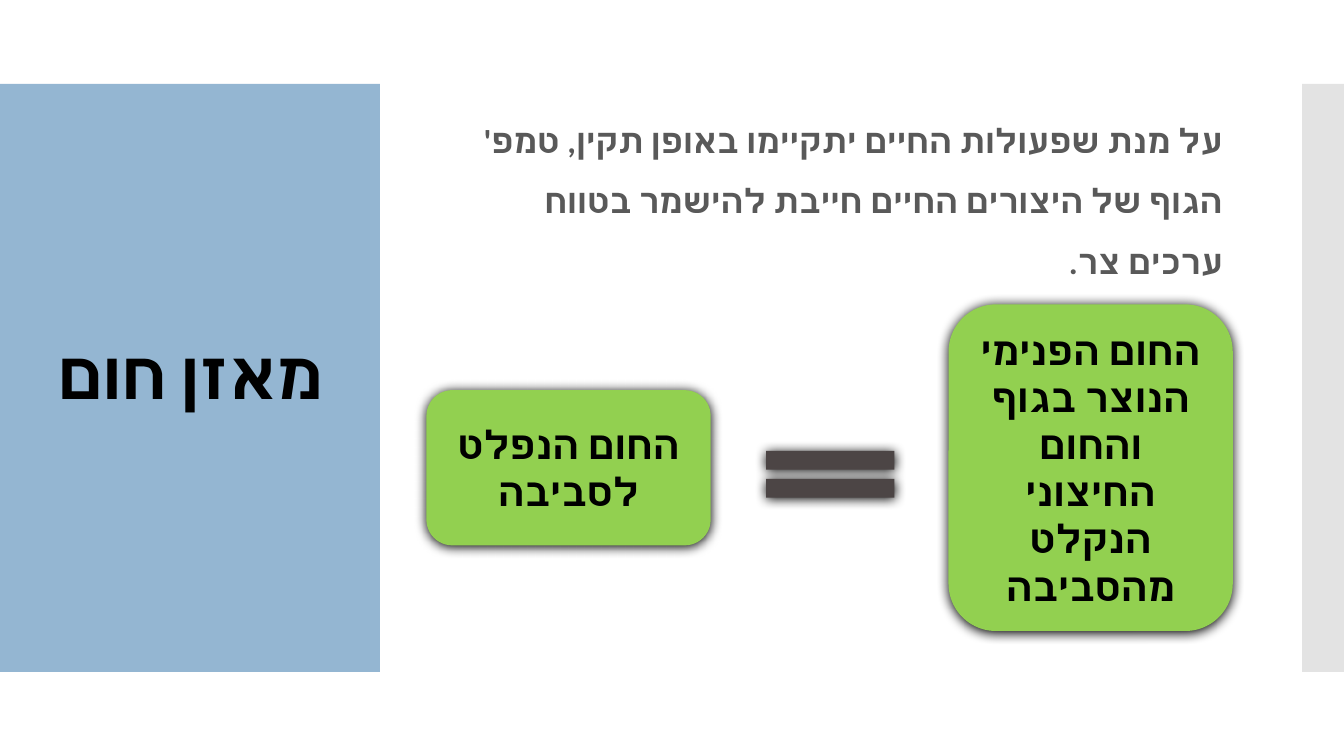
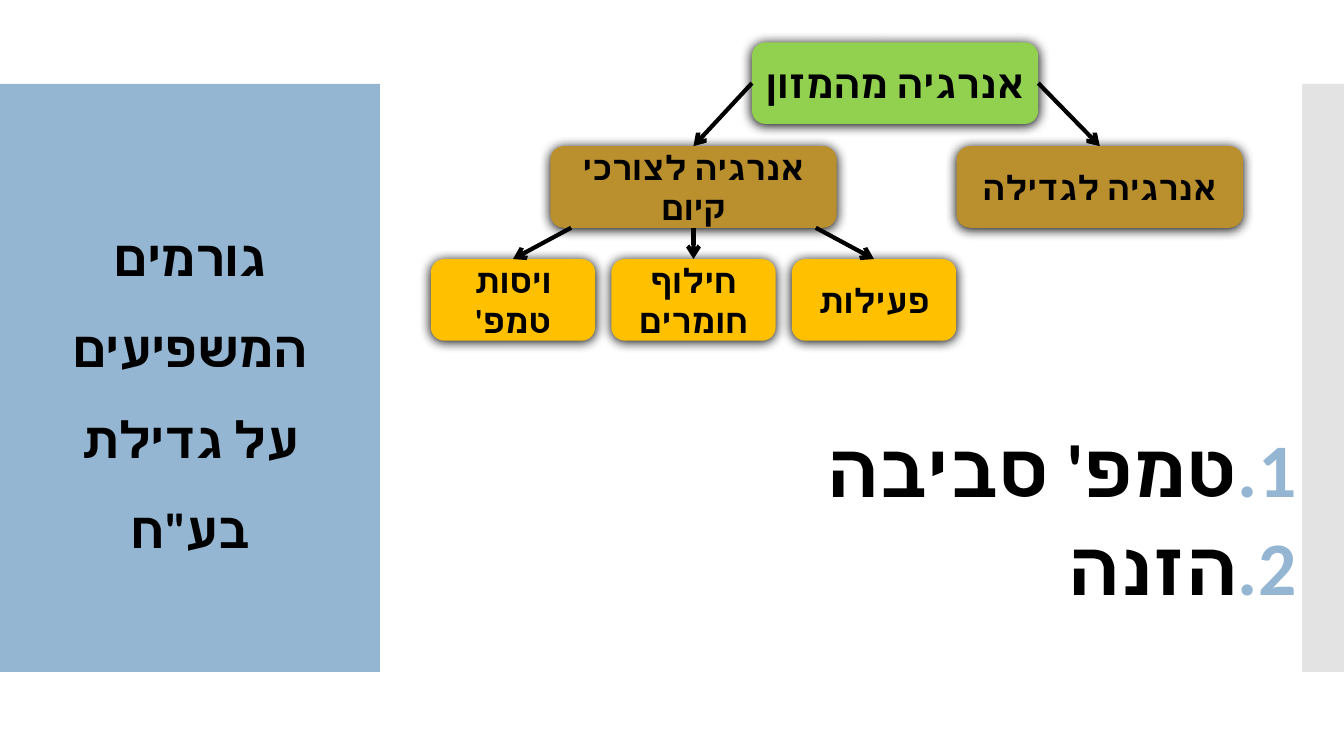
from dataclasses import dataclass

from lxml import etree
from pptx import Presentation, util as u
from pptx.dml.color import RGBColor
from pptx.enum import shapes, text
from pptx.oxml import ns


@dataclass(frozen=True)
class Theme:
    font: str = "Calibri"
    ink: str = "000000"
    soft_ink: str = "595959"
    accent: str = "94B6D2"
    edge: str = "C8C8C8"
    sign: str = "4C4545"
    source: str = "92D050"
    use: str = "BA8F2D"
    need: str = "FFC000"
    title: int = 48
    long_title: int = 36
    body: int = 24
    label: int = 28
    item: int = 54


THEME = Theme()
SHAPE = shapes.MSO_SHAPE
ALIGN = text.PP_ALIGN
ANCHOR = text.MSO_ANCHOR


def add_xml(parent, tag, **attributes):
    child = etree.SubElement(parent, ns.qn(tag))
    for name, value in attributes.items():
        child.set(name, str(value))
    return child


def write(shape, *lines, size=THEME.body, color=THEME.ink, align=ALIGN.CENTER,
          anchor=ANCHOR.MIDDLE, leading=1.0, before=0, tracking=0, inset=0.1,
          numbered=False):
    """Fill a shape with bold right-to-left paragraphs, one per line."""
    frame = shape.text_frame
    frame.word_wrap = True
    frame.vertical_anchor = anchor
    frame.margin_left = frame.margin_right = u.Inches(inset)
    for index, line in enumerate(lines):
        paragraph = frame.add_paragraph() if index else frame.paragraphs[0]
        paragraph.alignment = align
        paragraph.line_spacing = leading
        paragraph.space_before = u.Pt(before)
        properties = paragraph._p.get_or_add_pPr()
        properties.set("rtl", "1")
        if numbered:
            indent = u.Inches(0.5)
            properties.set("marL", str(indent))
            properties.set("indent", str(-indent))
            add_xml(add_xml(properties, "a:buClr"), "a:srgbClr", val=THEME.accent)
            add_xml(properties, "a:buAutoNum", type="arabicPeriod")
        run = paragraph.add_run()
        run.text = line
        font = run.font
        font.name, font.size, font.bold = THEME.font, u.Pt(size), True
        font.color.rgb = RGBColor.from_string(color)
        add_xml(font._element, "a:cs", typeface=THEME.font)
        if tracking:
            font._element.set("spc", str(round(tracking * 100)))


class Deck:
    """Holds the current slide; every length is a percentage of the slide's size."""

    BAND_TOP, BAND_HEIGHT, BAND_WIDTH = 11.11, 77.78, 28.27
    EDGE_LEFT = 96.88

    def __init__(self):
        self.presentation = Presentation()
        self.presentation.slide_width = u.Inches(13.33)
        self.presentation.slide_height = u.Inches(7.5)
        self.slide = None

    def x(self, share):
        return round(self.presentation.slide_width * share / 100)

    def y(self, share):
        return round(self.presentation.slide_height * share / 100)

    def place(self, left, top, width, height):
        return self.x(left), self.y(top), self.x(width), self.y(height)

    def new_slide(self, title, size, leading):
        self.slide = self.presentation.slides.add_slide(self.presentation.slide_layouts[6])
        self.block(SHAPE.RECTANGLE, THEME.accent, 0, self.BAND_TOP,
                   self.BAND_WIDTH, self.BAND_HEIGHT)
        edge = self.block(SHAPE.RECTANGLE, THEME.edge, self.EDGE_LEFT, self.BAND_TOP,
                          100 - self.EDGE_LEFT, self.BAND_HEIGHT)
        color = edge.fill._xPr.find(ns.qn("a:solidFill"))[0]
        add_xml(color, "a:alpha", val=50000)
        self.words(title, place=(2.1, 16.4, 24.15, 67.07),
                   size=size, leading=leading, tracking=-0.6)

    def block(self, kind, fill, left, top, width, height):
        shape = self.slide.shapes.add_shape(kind, *self.place(left, top, width, height))
        shape.shadow.inherit = False
        shape.fill.solid()
        shape.fill.fore_color.rgb = RGBColor.from_string(fill)
        shape.line.fill.background()
        return shape

    def raised(self, kind, fill, center, middle, width, height):
        """Add a shape with a soft shadow, placed by its centre."""
        shape = self.block(kind, fill, center - width / 2, middle - height / 2, width, height)
        effects = shape._element.spPr.find(ns.qn("a:effectLst"))
        shadow = add_xml(effects, "a:outerShdw", blurRad=u.Pt(8.5), dist=u.Pt(1),
                         dir=5400000, algn="ctr", rotWithShape=0)
        add_xml(shadow, "a:srgbClr", val=THEME.ink)
        return shape

    def card(self, label, fill, center, middle, width, height, **style):
        card = self.raised(SHAPE.ROUNDED_RECTANGLE, fill, center, middle, width, height)
        write(card, label, **style)

    def words(self, *lines, place, **style):
        write(self.slide.shapes.add_textbox(*self.place(*place)), *lines, **style)

    def arrow(self, start, end):
        line = self.slide.shapes.add_connector(
            shapes.MSO_CONNECTOR.STRAIGHT, self.x(start[0]), self.y(start[1]),
            self.x(end[0]), self.y(end[1]))
        line.line.color.rgb = RGBColor.from_string(THEME.ink)
        line.line.width = u.Pt(3)
        add_xml(line.line._get_or_add_ln(), "a:tailEnd", type="arrow")
        add_xml(line._element.spPr, "a:effectLst")


def heat_balance(deck):
    deck.new_slide("מאזן חום", THEME.title, 0.9)
    deck.words("על מנת שפעולות החיים יתקיימו באופן תקין, טמפ' הגוף של היצורים החיים "
               "חייבת להישמר בטווח ערכים צר.",
               place=(33.22, 12.53, 58.5, 74.67), color=THEME.soft_ink,
               align=ALIGN.RIGHT, anchor=ANCHOR.TOP, leading=1.5, before=12)
    middle, width = 61.87, 21.15
    for label, center, height in (
            ("החום הפנימי הנוצר בגוף והחום החיצוני הנקלט מהסביבה", 81.15, 43.2),
            ("החום הנפלט לסביבה", 42.3, 20.53)):
        deck.card(label, THEME.source, center, middle, width, height, size=THEME.label)
    deck.raised(SHAPE.MATH_EQUAL, THEME.sign, 61.77, 62.73, 12.98, 10.53)


def growth_factors(deck):
    deck.new_slide("גורמים המשפיעים על גדילת בע\"ח", THEME.long_title, 1.5)
    deck.words("טמפ' סביבה", "הזנה", place=(28.27, 56.5, 68.93, 30.7),
               size=THEME.item, align=ALIGN.RIGHT, anchor=ANCHOR.TOP,
               leading=0.9, before=12, numbered=True)

    wide, narrow, height = 21.3, 12.23, 10.8
    food_middle, use_middle, need_middle = 11, 24.73, 39.67
    food, upkeep, growth = 66.6, 51.6, 81.83
    need_gap, fan_gap = 13.43, 9.1

    deck.card("אנרגיה מהמזון", THEME.source, food, food_middle, wide, height,
              size=THEME.label, inset=0.02)
    for label, center, side in (("אנרגיה לצורכי קיום", upkeep, -1),
                                ("אנרגיה לגדילה", growth, 1)):
        deck.card(label, THEME.use, center, use_middle, wide, height)
        deck.arrow((food + side * wide / 2, food_middle), (center, use_middle - height / 2))
    for side, label in enumerate(("ויסות טמפ'", "חילוף חומרים", "פעילות"), start=-1):
        center = upkeep + side * need_gap
        deck.card(label, THEME.need, center, need_middle, narrow, height)
        deck.arrow((upkeep + side * fan_gap, use_middle + height / 2),
                   (center, need_middle - height / 2))


def main():
    deck = Deck()
    heat_balance(deck)
    growth_factors(deck)
    deck.presentation.save("out.pptx")


if __name__ == "__main__":
    main()
